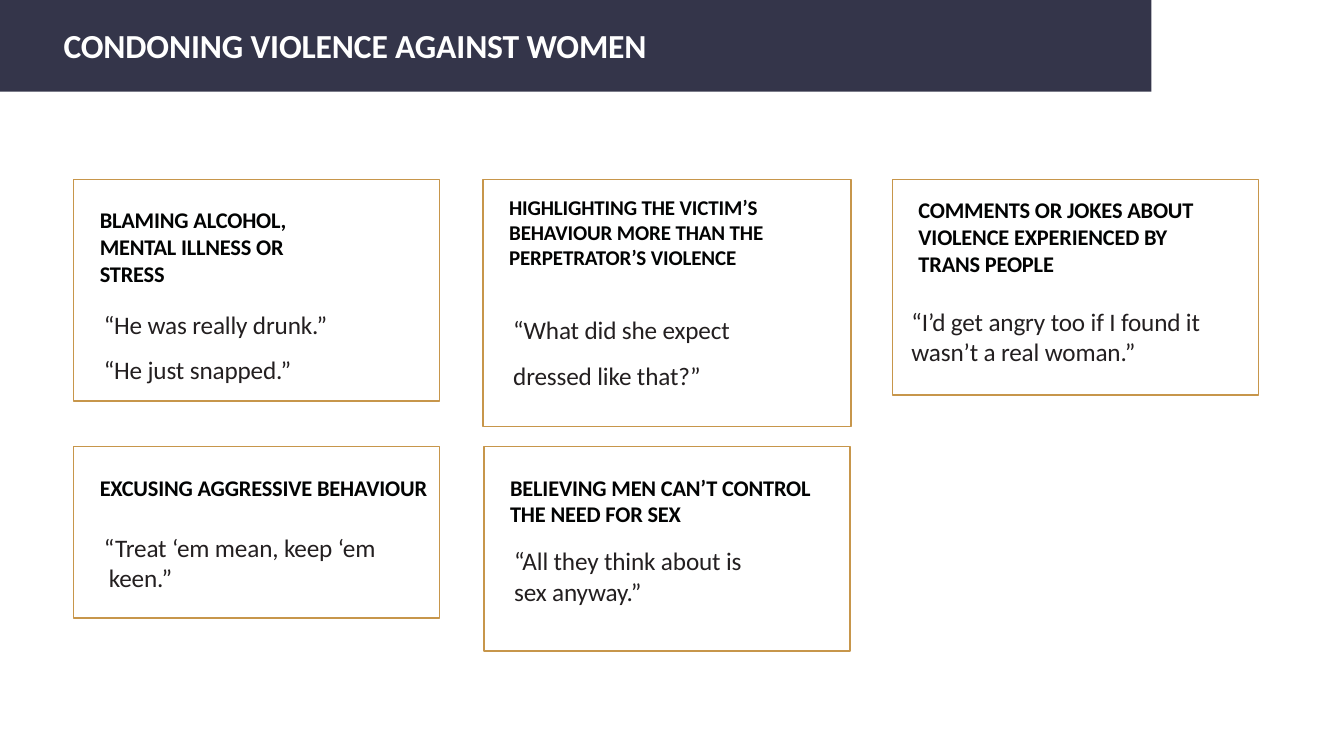
from pptx import Presentation
from pptx.dml.color import RGBColor
from pptx.enum import shapes, text
from pptx.util import Inches, Pt

NAVY = RGBColor(0x34, 0x35, 0x4A)
GOLD = RGBColor(0xC7, 0x96, 0x4B)
WHITE = RGBColor(0xFF, 0xFF, 0xFF)
BLACK = RGBColor(0x02, 0x03, 0x03)
CHARCOAL = RGBColor(0x23, 0x1F, 0x20)


def set_up_frame(box, top_inset):
    frame = box.text_frame
    settings = {
        "word_wrap": True,
        "vertical_anchor": text.MSO_ANCHOR.TOP,
        "margin_left": 0,
        "margin_right": 0,
        "margin_bottom": 0,
        "margin_top": Inches(top_inset),
    }
    for name, value in settings.items():
        setattr(frame, name, value)
    return frame


def write(para, words, size, color, bold, indent, hanging=0, **spacing):
    para.alignment = text.PP_ALIGN.LEFT
    for name, value in spacing.items():
        setattr(para, name, value)
    # Left indent, with the first line pulled back by the hanging amount
    properties = para._p.get_or_add_pPr()
    properties.set("marL", str(Inches(indent + hanging)))
    properties.set("indent", str(-Inches(hanging)))
    # A newline in the words becomes a line break
    for number, line in enumerate(words.split("\n")):
        if number:
            para.add_line_break()
        span = para.add_run()
        span.text = line
        span.font.name = "Calibri"
        span.font.size = Pt(size)
        span.font.bold = bold
        span.font.color.rgb = color
        span._r.get_or_add_rPr().set("spc", "-10")


deck = Presentation()
deck.slide_width = Inches(13.33)
deck.slide_height = Inches(7.5)
page = deck.slides.add_slide(deck.slide_layouts[6])

# Title band
band = page.shapes.add_shape(
    shapes.MSO_SHAPE.RECTANGLE, 0, 0, Inches(11.42), Inches(0.91))
band.shadow.inherit = False
band.fill.solid()
band.fill.fore_color.rgb = NAVY
band.line.fill.background()

# Title
title = page.shapes.add_textbox(
    Inches(0.62), Inches(0.24), Inches(10.19), Inches(0.44))
write(set_up_frame(title, 0.01).paragraphs[0],
      "CONDONING VIOLENCE AGAINST WOMEN", 24, WHITE, True, 0.01)

# Cards: left, top, width, height, top inset, heading, heading size,
# quote, quote indent, hanging, gap above quote, line spacing
ROW_1, ROW_2 = 1.78, 4.43
CARDS = [
    (0.73, ROW_1, 3.63, 2.2, 0.27,
     "BLAMING ALCOHOL,\nMENTAL ILLNESS OR\nSTRESS", 16,
     "“He was really drunk.”\n“He just snapped.”", 0.3, 0, 5, 1.5),
    (4.79, ROW_1, 3.65, 2.45, 0.15,
     "HIGHLIGHTING THE VICTIM’S\nBEHAVIOUR MORE THAN THE\nPERPETRATOR’S VIOLENCE", 15,
     "“What did she expect\ndressed like that?”", 0.3, 0, 20.9, 1.5),
    (8.85, ROW_1, 3.63, 2.14, 0.17,
     "COMMENTS OR JOKES ABOUT\nVIOLENCE EXPERIENCED BY\nTRANS PEOPLE", 16,
     "“I’d get angry too if I found it\nwasn’t a real woman.”", 0.19, 0, 20.9, 1),
    (0.73, ROW_2, 3.63, 1.7, 0.27,
     "EXCUSING AGGRESSIVE BEHAVIOUR", 16,
     "“Treat ‘em mean, keep ‘em\nkeen.”", 0.3, 0.05, 22.3, 1),
    (4.8, ROW_2, 3.63, 2.03, 0.27,
     "BELIEVING MEN CAN’T CONTROL\nTHE NEED FOR SEX", 16,
     "“All they think about is\nsex anyway.”", 0.3, 0, 13.1, 1),
]

for (left, top, width, height, inset, heading, heading_size,
     quote, indent, hanging, gap, line_spacing) in CARDS:
    card = page.shapes.add_shape(
        shapes.MSO_SHAPE.RECTANGLE,
        Inches(left), Inches(top), Inches(width), Inches(height))
    card.shadow.inherit = False
    card.fill.background()
    card.line.color.rgb = GOLD
    card.line.width = Pt(1)
    frame = set_up_frame(card, inset)
    write(frame.paragraphs[0], heading, heading_size, BLACK, True, 0.26)
    write(frame.add_paragraph(), quote, 18, CHARCOAL, False, indent, hanging,
          space_before=Pt(gap), line_spacing=line_spacing)

deck.save("out.pptx")
